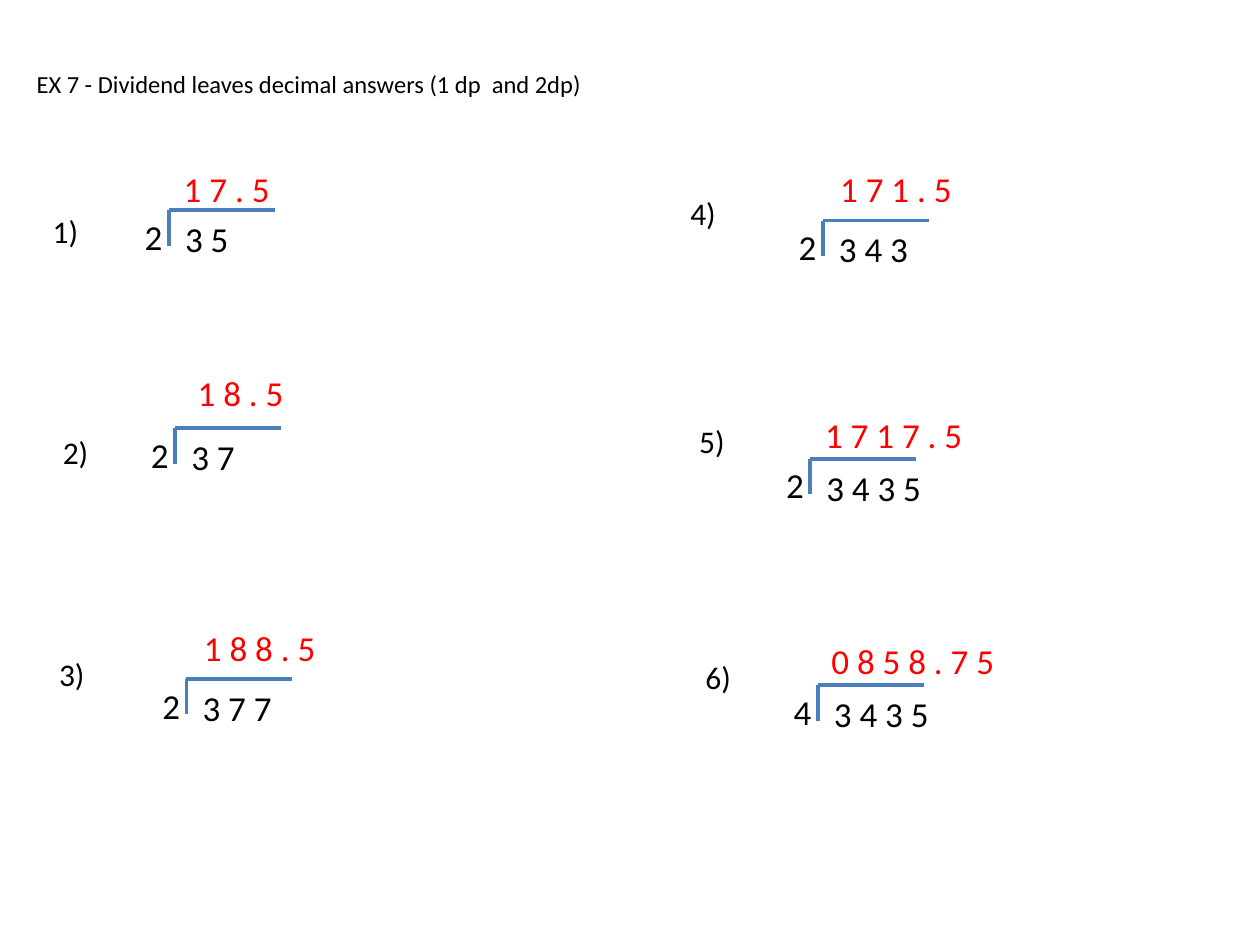
"""Build a worksheet slide of six long divisions with decimal answers."""
from pptx import Presentation
from pptx.dml.color import RGBColor
from pptx.enum.shapes import MSO_CONNECTOR
from pptx.enum.text import MSO_ANCHOR, MSO_AUTO_SIZE, PP_ALIGN
from pptx.oxml.ns import qn
from pptx.util import Inches, Pt

BLACK = RGBColor(0x00, 0x00, 0x00)
RED = RGBColor(0xFF, 0x00, 0x00)
BLUE = RGBColor(0x4B, 0x7E, 0xBC)

HEADING = "EX 7 - Dividend leaves decimal answers (1 dp  and 2dp)"
# number, divisor, dividend, answer, bracket corner, number place, answer place
DIVISIONS = [
    ("1)", "2", "35", "17.5", (1.34, 1.67), (0.32, 1.63), (1.36, 1.28)),
    ("2)", "2", "37", "18.5", (1.39, 3.40), (0.40, 3.39), (1.47, 2.90)),
    ("3)", "2", "377", "188.5", (1.48, 5.39), (0.37, 5.15), (1.52, 4.92)),
    ("4)", "2", "343", "171.5", (6.53, 1.75), (5.38, 1.49), (6.57, 1.28)),
    ("5)", "2", "3435", "1717.5", (6.43, 3.64), (5.45, 3.30), (6.45, 3.23)),
    ("6)", "4", "3435", "0858.75", (6.49, 5.44), (5.50, 5.17), (6.50, 5.03)),
]
BRACKET_WIDTH, BRACKET_HEIGHT = 0.84, 0.28
DIGIT_BOX, DIGIT_STEP, POINT_STEP = 0.34, 0.21, 0.13
SUM_HEIGHT, NUMBER_SIZE = 0.44, (0.42, 0.40)


def write(box, text, size, color=BLACK, wrap=False):
    frame = box.text_frame
    frame.text = text
    frame_format = {
        "word_wrap": wrap,
        "auto_size": MSO_AUTO_SIZE.SHAPE_TO_FIT_TEXT,
        "vertical_anchor": MSO_ANCHOR.TOP,
    }
    for name, value in frame_format.items():
        setattr(frame, name, value)
    paragraph = frame.paragraphs[0]
    paragraph.alignment = PP_ALIGN.LEFT
    font = paragraph.runs[0].font
    for name, value in {"name": "Calibri", "size": Pt(size)}.items():
        setattr(font, name, value)
    font.color.rgb = color


def add_digits(shapes, digits, left, top, color=BLACK):
    points = digits.count(".")
    width = DIGIT_BOX + DIGIT_STEP * (len(digits) - points - 1) + POINT_STEP * points
    box = shapes.add_textbox(*map(Inches, (left, top, width, SUM_HEIGHT)))
    write(box, " ".join(digits), 20, color)


def add_stroke(shapes, start, end):
    stroke = shapes.add_connector(MSO_CONNECTOR.STRAIGHT, *map(Inches, start + end))
    stroke.line.color.rgb = BLUE
    stroke.line.width = Pt(2.25)
    properties = stroke._element.spPr
    properties.append(properties.makeelement(qn("a:effectLst"), {}))


def add_division(shapes, number, divisor, dividend, answer, corner, number_at, answer_at):
    left, top = corner
    bracket = shapes.add_group_shape().shapes
    add_stroke(bracket, (left, top + BRACKET_HEIGHT), corner)
    add_stroke(bracket, (left + BRACKET_WIDTH, top), corner)
    add_digits(bracket, dividend, left + 0.03, top + 0.01)
    add_digits(bracket, divisor, left - 0.29, top - 0.01)
    label = shapes.add_textbox(*map(Inches, number_at + NUMBER_SIZE))
    write(label, number, 18, wrap=True)
    add_digits(shapes, answer, *answer_at, RED)


def main():
    deck = Presentation()
    deck.slide_width, deck.slide_height = Inches(10), Inches(7.5)
    slide = deck.slides.add_slide(deck.slide_layouts[5])
    heading = slide.shapes.title
    place = {"left": 0.19, "top": 0.5, "width": 4.57, "height": 0.34}
    for name, value in place.items():
        setattr(heading, name, Inches(value))
    write(heading, HEADING, 14)
    for division in DIVISIONS:
        add_division(slide.shapes, *division)
    deck.save("out.pptx")


if __name__ == "__main__":
    main()
